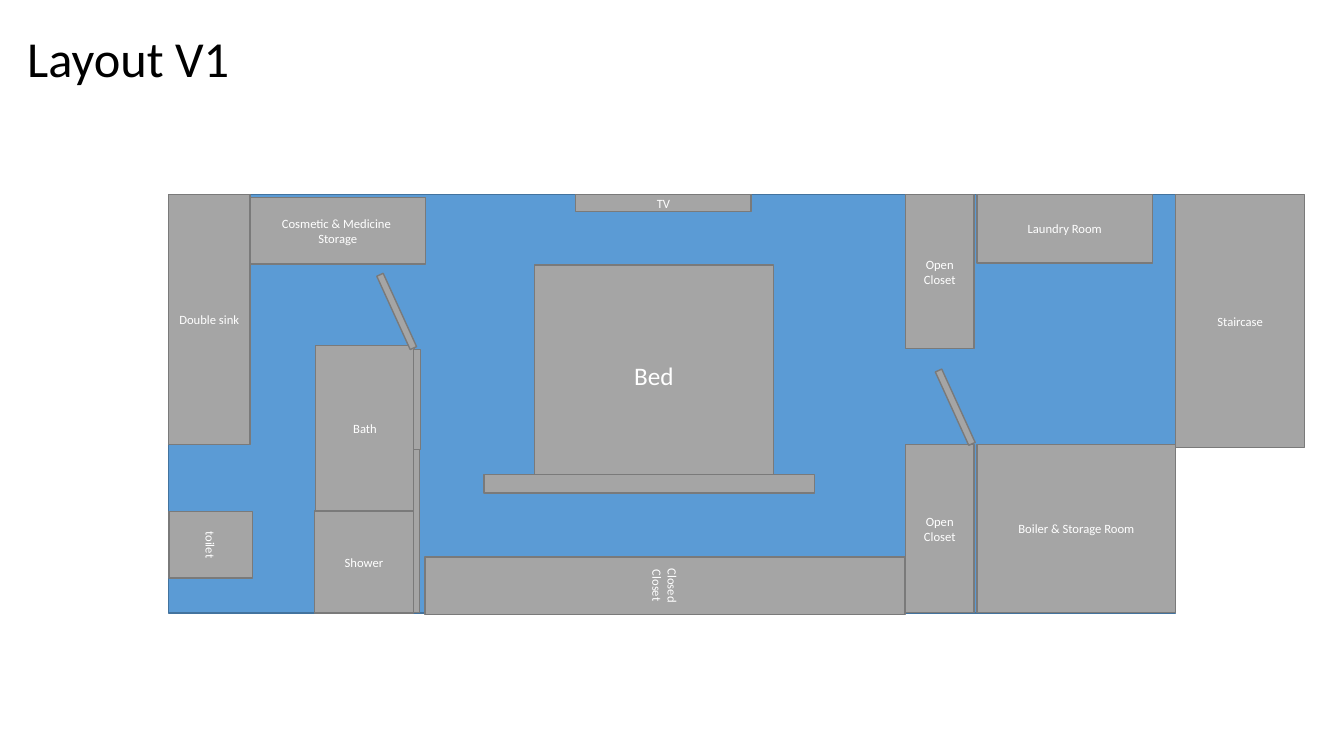
"""Build the Layout V1 floor plan slide."""
from pptx import Presentation
from pptx.dml.color import RGBColor
from pptx.enum.shapes import MSO_SHAPE
from pptx.enum.text import MSO_ANCHOR, PP_ALIGN
from pptx.util import Inches, Pt

BLUE = RGBColor(0x5B, 0x9B, 0xD5)
NAVY = RGBColor(0x43, 0x73, 0x9E)
GREY = RGBColor(0xA5, 0xA5, 0xA5)
EDGE = RGBColor(0x7A, 0x7A, 0x7A)
WHITE = RGBColor(0xFF, 0xFF, 0xFF)
BLACK = RGBColor(0, 0, 0)
FONT = "Calibri"

TOP = 1.93
MID = 4.41
TILT = 335.5

ROOMS = [
    ("Bath", 3.13, 3.43, 0.98, 1.64, 0),
    ("toilet", 1.76, 4.99, 0.66, 0.83, 90),
    ("Double sink", 1.67, TOP, 0.81, 2.48, 0),
    ("Open Closet", 8.98, TOP, 0.68, 1.53, 0),
    ("Laundry Room", 9.69, TOP, 1.74, 0.68, 0),
    ("Staircase", 11.66, TOP, 1.28, 2.51, 0),
    ("Cosmetic & Medicine \nStorage", 2.48, 1.96, 1.74, 0.66, 0),
    ("Open Closet", 8.98, MID, 0.68, 1.67, 0),
    ("Boiler & Storage Room", 9.69, MID, 1.97, 1.67, 0),
    ("Shower", 3.12, 5.07, 0.98, 1.01, 0),
    ("Closed Closet", 6.31, 3.43, 0.57, 4.76, 90),
    ("TV", 5.71, TOP, 1.74, 0.17, 0),
]
DOORS = [(3.9, 2.69), (9.44, 3.64)]
WALLS = [(4.1, MID, 0.06, 1.67), (4.1, 3.47, 0.07, 0.99)]
BOARD = (4.8, 4.71, 3.28, 0.18)


def add_box(slide, left, top, width, height, turn=0, fill=GREY, edge=EDGE):
    """Draw one outlined rectangle of the plan."""
    box = slide.shapes.add_shape(
        MSO_SHAPE.RECTANGLE, Inches(left), Inches(top), Inches(width), Inches(height)
    )
    box.rotation = turn
    box.shadow.inherit = False
    box.fill.solid()
    box.fill.fore_color.rgb = fill
    box.line.color.rgb = edge
    box.line.width = Pt(1)
    return box


def add_room(slide, label, left, top, width, height, turn=0, size=9):
    """Draw a rectangle with a centred label."""
    frame = add_box(slide, left, top, width, height, turn).text_frame
    frame.word_wrap = True
    frame.vertical_anchor = MSO_ANCHOR.MIDDLE
    frame.text = label
    for para in frame.paragraphs:
        para.alignment = PP_ALIGN.CENTER
        para.font.name = FONT
        para.font.size = Pt(size)
        para.font.color.rgb = WHITE


def set_title(slide, text):
    """Place and format the slide title."""
    title = slide.shapes.title
    title.left, title.top = Inches(0.17), Inches(-0.12)
    title.width, title.height = Inches(2.82), Inches(1.45)
    frame = title.text_frame
    frame.text = text
    frame.word_wrap = True
    frame.vertical_anchor = MSO_ANCHOR.MIDDLE
    para = frame.paragraphs[0]
    para.alignment = PP_ALIGN.LEFT
    para.line_spacing = 0.9
    para.font.name = FONT
    para.font.size = Pt(36)
    para.font.color.rgb = BLACK


def main():
    """Assemble the plan and save it."""
    deck = Presentation()
    deck.slide_width, deck.slide_height = Inches(13.33), Inches(7.5)
    slide = deck.slides.add_slide(deck.slide_layouts[5])
    set_title(slide, "Layout V1")
    add_box(slide, 1.67, TOP, 9.99, 4.15, fill=BLUE, edge=NAVY)
    add_room(slide, "Bed", 5.3, 2.63, 2.37, 2.19, size=18)
    for room in ROOMS:
        add_room(slide, *room)
    for left, top in DOORS:
        add_box(slide, left, top, 0.07, 0.8, TILT)
    for wall in WALLS:
        add_box(slide, *wall)
    add_box(slide, *BOARD)
    deck.save("out.pptx")


if __name__ == "__main__":
    main()
